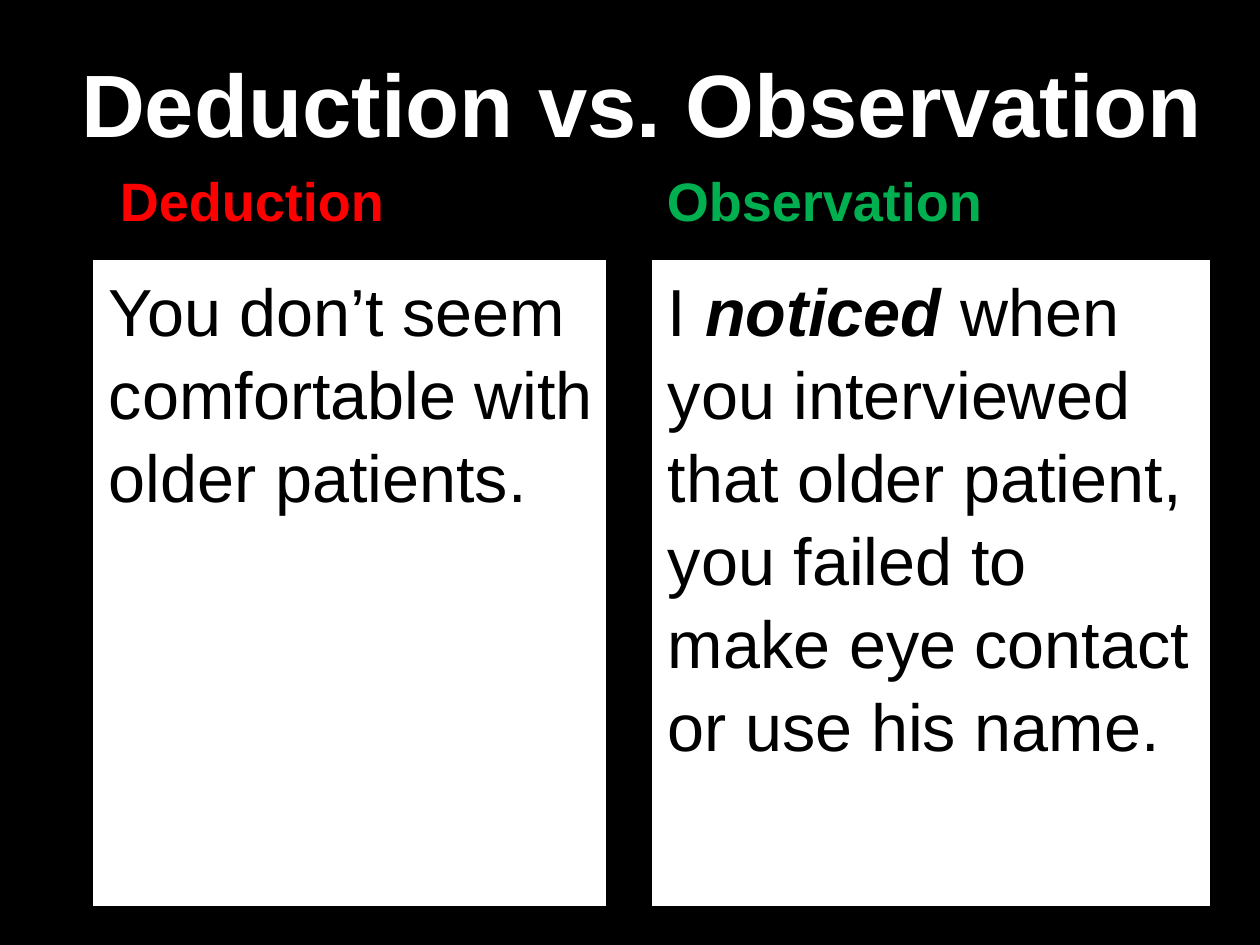
from dataclasses import dataclass

from pptx import Presentation
from pptx.dml.color import RGBColor
from pptx.enum.shapes import MSO_SHAPE
from pptx.enum.text import MSO_ANCHOR, MSO_AUTO_SIZE, PP_ALIGN
from pptx.util import Emu, Pt

EMU_PER_PX = 914400 / 126
SLIDE_WIDTH, SLIDE_HEIGHT = 1260, 945


@dataclass(frozen=True)
class Theme:
    font: str = "Arial"
    black: str = "000000"
    white: str = "FFFFFF"
    red: str = "FF0000"
    green: str = "00B050"
    title_size: float = 50.6
    heading_size: float = 30.9
    body_size: float = 38
    outline: float = 2


THEME = Theme()


def px(length):
    return Emu(round(length * EMU_PER_PX))


def rgb(color):
    return RGBColor.from_string(color)


def write_text(shape, runs, *, size, color, bold=False, anchor=MSO_ANCHOR.TOP,
               line_spacing=1.0, left=13, top=6):
    """Fill a shape with one paragraph; runs holds (text, emphasised) pairs."""
    frame = shape.text_frame
    frame.word_wrap = True
    frame.auto_size = MSO_AUTO_SIZE.NONE
    frame.vertical_anchor = anchor
    frame.margin_left, frame.margin_right = px(left), px(12)
    frame.margin_top, frame.margin_bottom = px(top), px(6)
    paragraph = frame.paragraphs[0]
    paragraph.alignment = PP_ALIGN.LEFT
    paragraph.line_spacing = line_spacing
    paragraph.space_before = Pt(0)
    for text, emphasised in runs:
        run = paragraph.add_run()
        run.text = text
        run.font.name = THEME.font
        run.font.size = Pt(size)
        run.font.color.rgb = rgb(color)
        run.font.bold = bold or emphasised
        run.font.italic = emphasised


def add_title(slide, text, left, top, width, height):
    title = slide.shapes.title
    title.left, title.top = px(left), px(top)
    title.width, title.height = px(width), px(height)
    write_text(title, [(text, False)], size=THEME.title_size, color=THEME.white,
               bold=True, anchor=MSO_ANCHOR.MIDDLE, top=18)


def add_column(slide, heading, color, runs, left, top, width, height, heading_indent):
    """Place a coloured heading above a white panel of text."""
    heading_height, gap = 76, 20
    heading_box = slide.shapes.add_textbox(
        px(left + heading_indent), px(top), px(505), px(heading_height))
    write_text(heading_box, [(heading, False)], size=THEME.heading_size,
               color=color, bold=True, anchor=MSO_ANCHOR.BOTTOM)

    panel_offset = heading_height + gap
    panel = slide.shapes.add_shape(
        MSO_SHAPE.RECTANGLE, px(left), px(top + panel_offset),
        px(width), px(height - panel_offset))
    panel.shadow.inherit = False
    panel.fill.solid()
    panel.fill.fore_color.rgb = rgb(THEME.white)
    panel.line.color.rgb = rgb(THEME.black)
    panel.line.width = Pt(THEME.outline)
    write_text(panel, runs, size=THEME.body_size, color=THEME.black,
               line_spacing=1.04, left=18, top=9)


def main():
    presentation = Presentation()
    presentation.slide_width = px(SLIDE_WIDTH)
    presentation.slide_height = px(SLIDE_HEIGHT)
    slide = presentation.slides.add_slide(presentation.slide_layouts[5])
    slide.background.fill.solid()
    slide.background.fill.fore_color.rgb = rgb(THEME.black)

    add_title(slide, "Deduction vs. Observation", 68, 29, 1166, 134)
    deduction = [("You don’t seem comfortable with older patients.", False)]
    observation = [
        ("I ", False),
        ("noticed ", True),
        ("when you interviewed that older patient, you failed to make eye "
         "contact or use his name.", False),
    ]
    columns_top, columns_height = 162, 746
    add_column(slide, "Deduction", THEME.red, deduction,
               91, columns_top, 517, columns_height, heading_indent=16)
    add_column(slide, "Observation", THEME.green, observation,
               650, columns_top, 562, columns_height, heading_indent=4)
    presentation.save("out.pptx")


if __name__ == "__main__":
    main()
